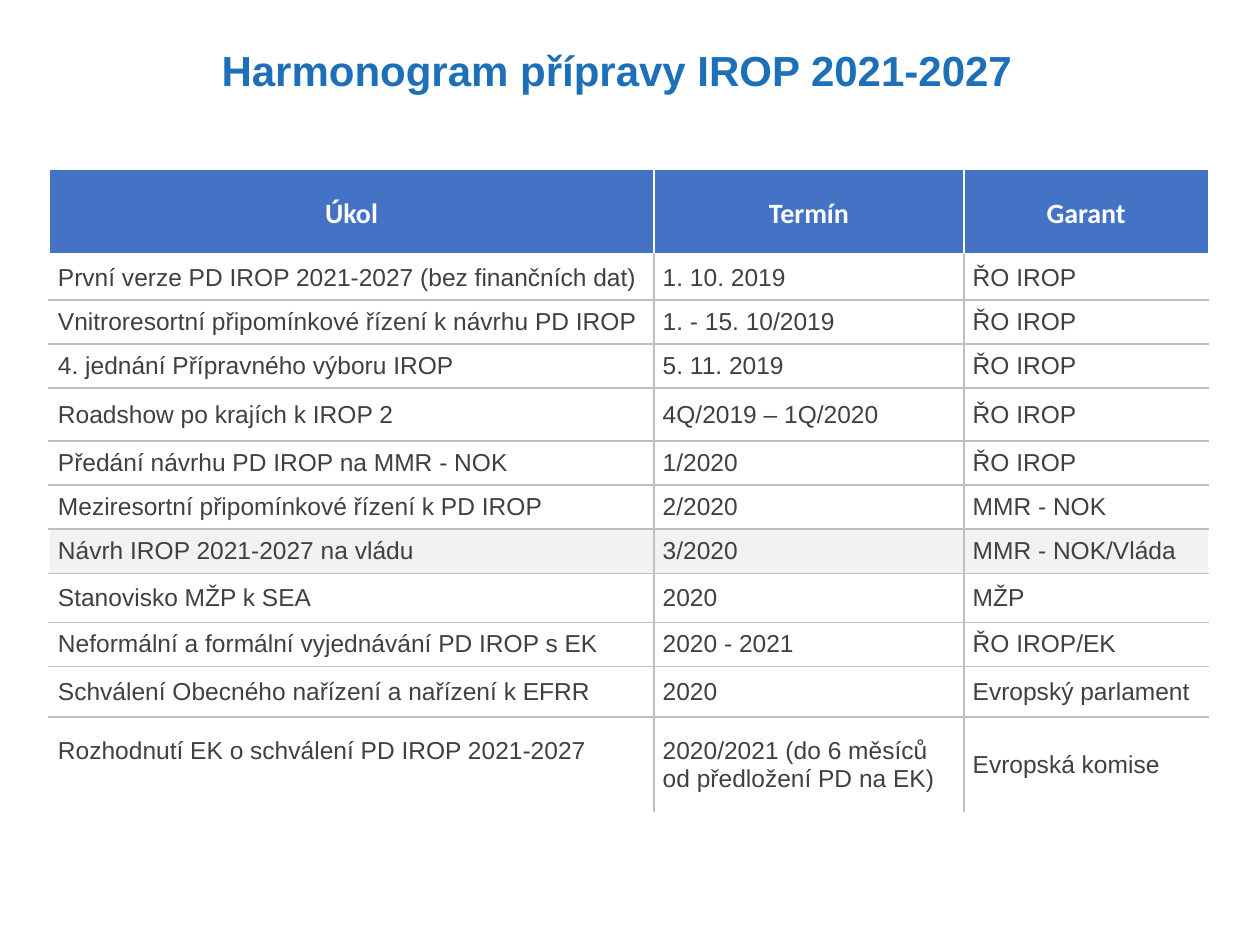
from typing import NamedTuple

from lxml import etree
from pptx import Presentation
from pptx.dml.color import RGBColor
from pptx.enum.text import MSO_ANCHOR, PP_ALIGN
from pptx.oxml.ns import qn
from pptx.util import Inches, Pt

MIDDLE = MSO_ANCHOR.MIDDLE
LEFT, CENTER = PP_ALIGN.LEFT, PP_ALIGN.CENTER

WHITE, GREY, BLUE, BAND = "FFFFFF", "BFBFBF", "4472C4", "F2F2F2"
TITLE_FONT = {"name": "Arial", "size": Pt(24), "bold": True}
HEAD_FONT = {"name": "Calibri", "size": Pt(16), "bold": True}
BODY_FONT = {"name": "Arial", "size": Pt(14), "bold": False}


class Task(NamedTuple):
    name: str
    date: str
    owner: str
    height: float = 0.35
    fill: str | None = None


HEADINGS = ("Úkol", "Termín", "Garant")
HEAD_HEIGHT = 0.69
COL_WIDTHS = (4.8, 2.46, 1.94)
TASKS = [
    Task("První verze PD IROP 2021-2027 (bez finančních dat)", "1. 10. 2019", "ŘO IROP"),
    Task("Vnitroresortní připomínkové řízení k návrhu PD IROP", "1. - 15. 10/2019", "ŘO IROP"),
    Task("4. jednání Přípravného výboru IROP", "5. 11. 2019", "ŘO IROP"),
    Task("Roadshow po krajích k IROP 2", "4Q/2019 – 1Q/2020", "ŘO IROP", 0.42),
    Task("Předání návrhu PD IROP na MMR - NOK", "1/2020", "ŘO IROP"),
    Task("Meziresortní připomínkové řízení k PD IROP", "2/2020", "MMR - NOK"),
    Task("Návrh IROP 2021-2027 na vládu", "3/2020", "MMR - NOK/Vláda", fill=BAND),
    Task("Stanovisko MŽP k SEA", "2020", "MŽP", 0.39),
    Task("Neformální a formální vyjednávání PD IROP s EK", "2020 - 2021", "ŘO IROP/EK"),
    Task("Schválení Obecného nařízení a nařízení k EFRR", "2020", "Evropský parlament", 0.4),
    Task("Rozhodnutí EK o schválení PD IROP 2021-2027",
         "2020/2021 (do 6 měsíců od předložení PD na EK)", "Evropská komise", 0.76),
]


def rgb(color: str) -> RGBColor:
    return RGBColor.from_string(color)


def write(tf, text: str, fmt: dict, color: str, align=LEFT, spacing: float = 1.0) -> None:
    p = tf.paragraphs[0]
    p.alignment, p.line_spacing = align, spacing
    r = p.add_run()
    r.text = text
    for key, value in fmt.items():
        setattr(r.font, key, value)
    r.font.color.rgb = rgb(color)


def set_border(cell, side: str, color: str, width: float = 1) -> None:
    ln = etree.SubElement(cell._tc.get_or_add_tcPr(), qn(f"a:ln{side}"), w=str(Pt(width)))
    fill = etree.SubElement(ln, qn("a:solidFill"))
    etree.SubElement(fill, qn("a:srgbClr"), val=color)


def format_cell(cell, fill: str | None) -> None:
    cell.vertical_anchor = MIDDLE
    cell.margin_left = cell.margin_right = Inches(0.07)
    cell.margin_top = cell.margin_bottom = 0
    if fill:
        cell.fill.solid()
        cell.fill.fore_color.rgb = rgb(fill)
    else:
        cell.fill.background()


def add_schedule(slide) -> None:
    heights = [HEAD_HEIGHT] + [task.height for task in TASKS]
    last_row, last_col = len(TASKS), len(HEADINGS) - 1
    table = slide.shapes.add_table(
        len(heights), len(HEADINGS), Inches(0.39), Inches(1.34),
        Inches(sum(COL_WIDTHS)), Inches(sum(heights))).table
    table.horz_banding = False
    for col, width in zip(table.columns, COL_WIDTHS):
        col.width = Inches(width)
    for row, height in zip(table.rows, heights):
        row.height = Inches(height)

    # Borders precede the fill in the cell properties
    for i in range(len(heights)):
        for j in range(len(HEADINGS)):
            cell = table.cell(i, j)
            head = i == 0
            set_border(cell, "L", WHITE if head or j == 0 else GREY)
            set_border(cell, "R", WHITE if head or j == last_col else GREY)
            set_border(cell, "T", WHITE if i <= 1 else GREY)
            set_border(cell, "B", WHITE if head or i == last_row else GREY, 3 if head else 1)
            format_cell(cell, BLUE if head else TASKS[i - 1].fill)
            if head:
                write(cell.text_frame, HEADINGS[j], HEAD_FONT, WHITE, CENTER, 1.07)
            else:
                write(cell.text_frame, TASKS[i - 1][j], BODY_FONT, "404040")

    # The last task lines up with the first line of its date
    table.cell(last_row, 0).margin_bottom = Inches(0.22)


def main() -> None:
    prs = Presentation()
    prs.slide_width, prs.slide_height = Inches(10), Inches(7.5)
    slide = prs.slides.add_slide(prs.slide_layouts[6])

    # Title
    sp = slide.shapes.add_textbox(Inches(1.66), Inches(0.33), Inches(6.68), Inches(0.5))
    tf = sp.text_frame
    tf.word_wrap = True
    tf.vertical_anchor = MIDDLE
    write(tf, "Harmonogram přípravy IROP 2021-2027", TITLE_FONT, "1D70B8", spacing=0.9)

    # Schedule table
    add_schedule(slide)
    prs.save("out.pptx")


if __name__ == "__main__":
    main()
